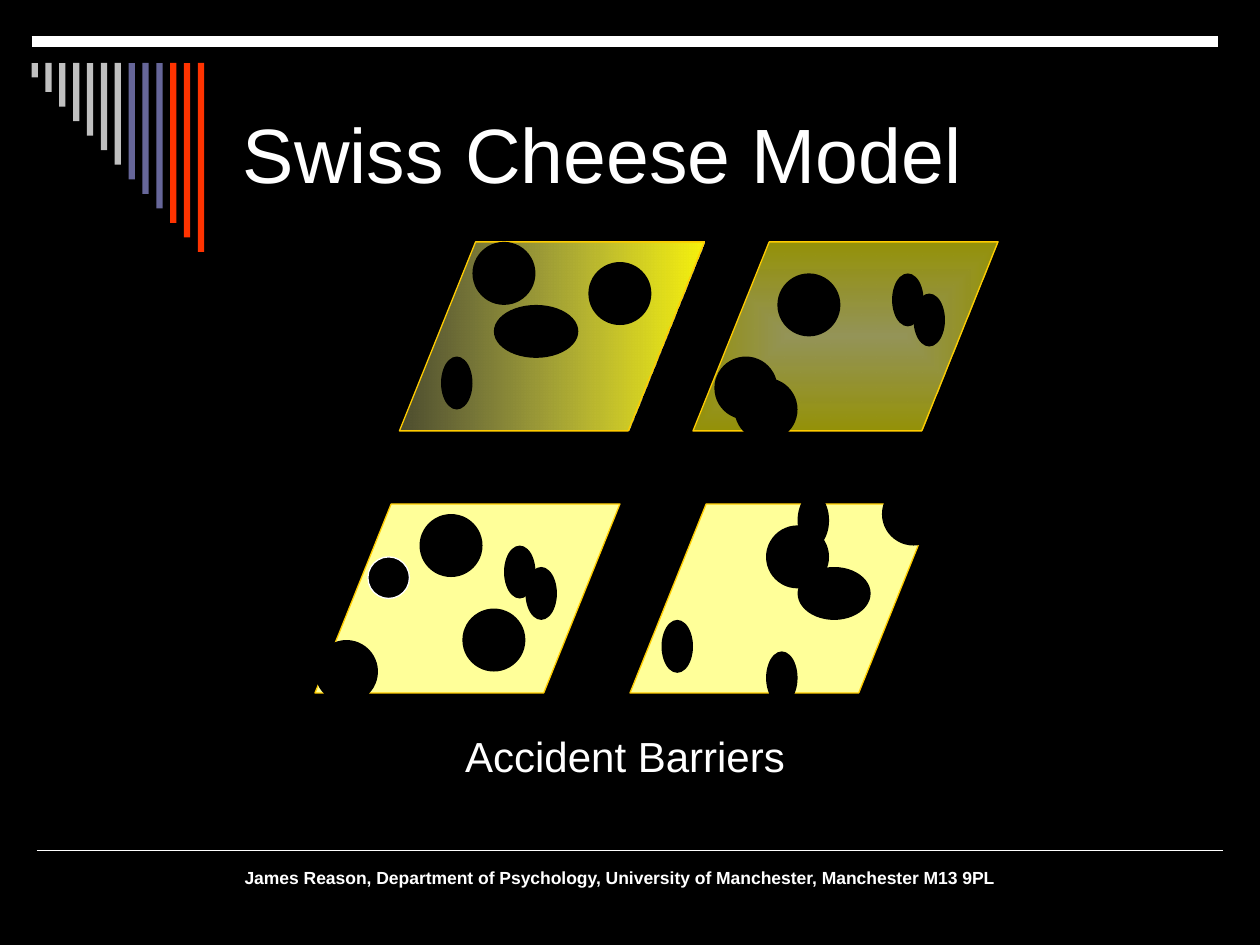
from pptx import Presentation
from pptx.dml.color import RGBColor
from pptx.enum.shapes import MSO_CONNECTOR, MSO_SHAPE
from pptx.enum.text import MSO_ANCHOR, PP_ALIGN
from pptx.oxml import parse_xml
from pptx.oxml.ns import nsdecls, qn
from pptx.util import Inches, Pt

BLACK = RGBColor(0x00, 0x00, 0x00)
WHITE = RGBColor(0xFF, 0xFF, 0xFF)
GREY = RGBColor(0xC0, 0xC0, 0xC0)
SLATE = RGBColor(0x66, 0x66, 0x99)
RED = RGBColor(0xFF, 0x33, 0x00)
CHEESE = RGBColor(0xFF, 0xFF, 0x99)
YELLOW = RGBColor(0xF8, 0xF3, 0x0D)
RIND = RGBColor(0xFF, 0xCC, 0x00)

deck = Presentation()
deck.slide_width, deck.slide_height = Inches(10), Inches(7.5)
page = deck.slides.add_slide(deck.slide_layouts[6])
page.background.fill.solid()
page.background.fill.fore_color.rgb = BLACK


def add_figure(kind, left, top, width, height, fill, line=None):
    figure = page.shapes.add_shape(
        kind, Inches(left), Inches(top), Inches(width), Inches(height))
    figure.shadow.inherit = False
    figure.fill.solid()
    figure.fill.fore_color.rgb = fill
    if line is None:
        figure.line.fill.background()
    else:
        figure.line.color.rgb = line
        figure.line.width = Pt(0.75)
    return figure


def set_gradient(figure, stops, direction):
    marks = "".join(
        f'<a:gs pos="{pos * 1000}"><a:srgbClr val="{color}">'
        f'<a:alpha val="{alpha * 1000}"/></a:srgbClr></a:gs>'
        for pos, color, alpha in stops)
    properties = figure.element.spPr
    solid = properties.find(qn("a:solidFill"))
    properties.replace(solid, parse_xml(
        f'<a:gradFill {nsdecls("a")} rotWithShape="1">'
        f'<a:gsLst>{marks}</a:gsLst>{direction}</a:gradFill>'))


for left, top, weight in [(0.29, 6.75, 1), (0.25, 0.33, 6)]:
    rule = page.shapes.add_connector(
        MSO_CONNECTOR.STRAIGHT, Inches(left), Inches(top), Inches(left + 9.42), Inches(top))
    rule.line.color.rgb = WHITE
    rule.line.width = Pt(weight)
    rule.element.spPr.append(parse_xml(f'<a:effectLst {nsdecls("a")}/>'))

bar_colors = [GREY] * 7 + [SLATE] * 3 + [RED] * 3
for index, color in enumerate(bar_colors):
    add_figure(MSO_SHAPE.RECTANGLE, 0.25 + 0.11 * index, 0.5,
               0.05, 1.5 * (index + 1) / len(bar_colors), color)

ROUND, TALL, WIDE, SMALL = (0.5, 0.5), (0.25, 0.42), (0.67, 0.42), (0.33, 0.33)
LINEAR = '<a:lin ang="0" scaled="1"/>'
CENTERED = ('<a:path path="shape"><a:fillToRect l="50000" t="50000" '
            'r="50000" b="50000"/></a:path>')
slices = [
    (5, 4, None, [
        (6.33, 3.92, TALL), (5.25, 4.92, TALL), (6.08, 4.17, ROUND),
        (7, 3.83, ROUND), (6.33, 4.5, (0.58, 0.42)), (6.08, 5.17, TALL)]),
    (2.5, 4, None, [
        (2.5, 5.08, ROUND), (4, 4.33, TALL), (2.92, 4.42, SMALL),
        (3.33, 4.08, ROUND), (3.67, 4.83, ROUND), (4.17, 4.5, TALL)]),
    (5.5, 1.92, ([(0, CHEESE, 58), (100, YELLOW, 60)], CENTERED), [
        (5.67, 2.83, ROUND), (7.08, 2.17, TALL), (5.83, 3, ROUND),
        (6.17, 2.17, ROUND), (7.25, 2.33, TALL)]),
    (3.17, 1.92, ([(0, CHEESE, 30), (100, YELLOW, 100)], LINEAR), [
        (3.75, 1.92, ROUND), (3.5, 2.83, TALL), (3.92, 2.42, WIDE),
        (4.67, 2.08, ROUND)]),
]
for left, top, gradient, holes in slices:
    barrier = add_figure(MSO_SHAPE.PARALLELOGRAM, left, top, 2.42, 1.5, CHEESE, RIND)
    barrier.adjustments[0] = 0.403
    if gradient:
        set_gradient(barrier, *gradient)
    for hole_left, hole_top, size in holes:
        add_figure(MSO_SHAPE.OVAL, hole_left, hole_top, *size, BLACK,
                   WHITE if size == SMALL else None)

texts = [
    ("Swiss Cheese Model", (1.83, 0.5, 7.67, 1.42), PP_ALIGN.LEFT,
     {"vertical_anchor": MSO_ANCHOR.MIDDLE, "word_wrap": True},
     {"size": Pt(44), "bold": False}),
    ("Accident Barriers", (3.42, 5.75, 3.08, 0.5), PP_ALIGN.CENTER,
     {"vertical_anchor": MSO_ANCHOR.TOP, "word_wrap": True},
     {"size": Pt(24), "bold": False}),
    ("James Reason, Department of Psychology, University of Manchester, Manchester M13 9PL",
     (1.83, 6.83, 6.17, 0.27), PP_ALIGN.CENTER,
     {"vertical_anchor": MSO_ANCHOR.TOP, "word_wrap": False},
     {"size": Pt(10), "bold": True}),
]
for words, place, alignment, frame_format, font_format in texts:
    box = page.shapes.add_textbox(*map(Inches, place))
    for name, value in frame_format.items():
        setattr(box.text_frame, name, value)
    para = box.text_frame.paragraphs[0]
    para.alignment = alignment
    span = para.add_run()
    span.text = words
    span.font.color.rgb = WHITE
    for name, value in {"name": "Arial", **font_format}.items():
        setattr(span.font, name, value)

deck.save("out.pptx")
